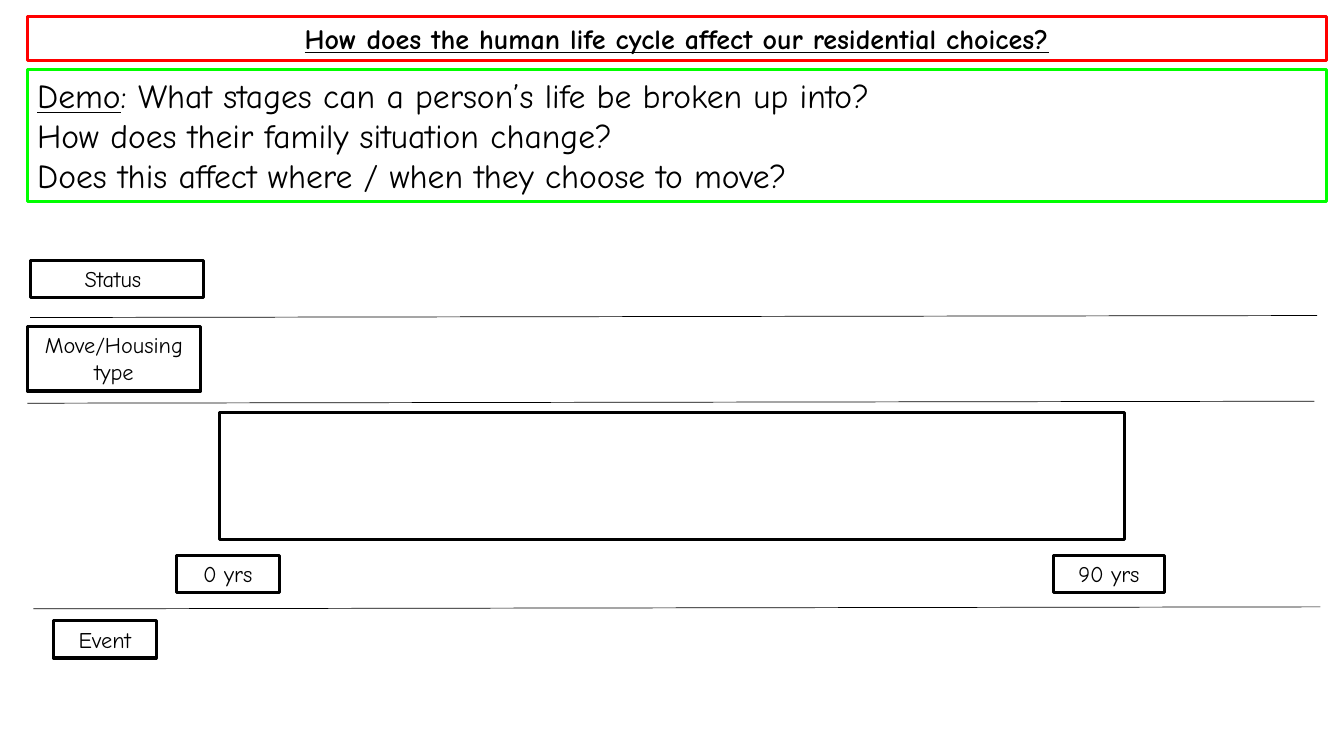
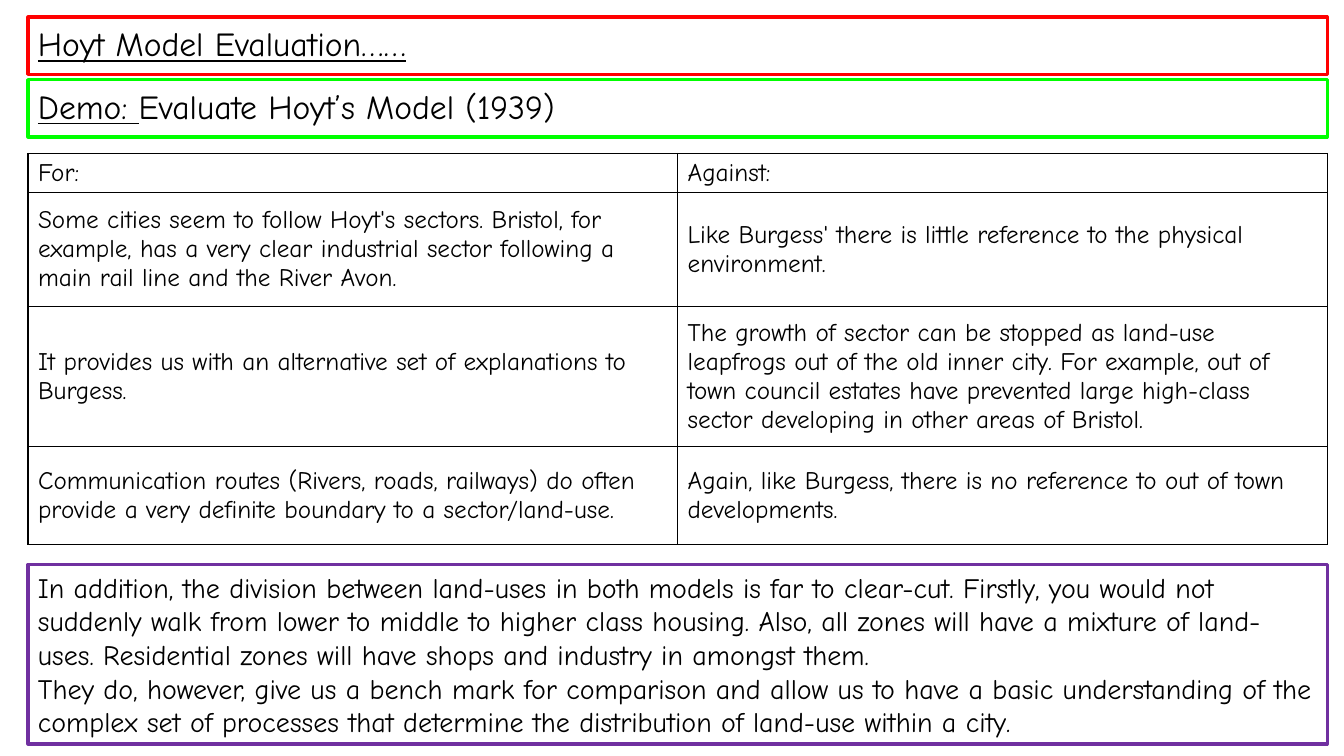
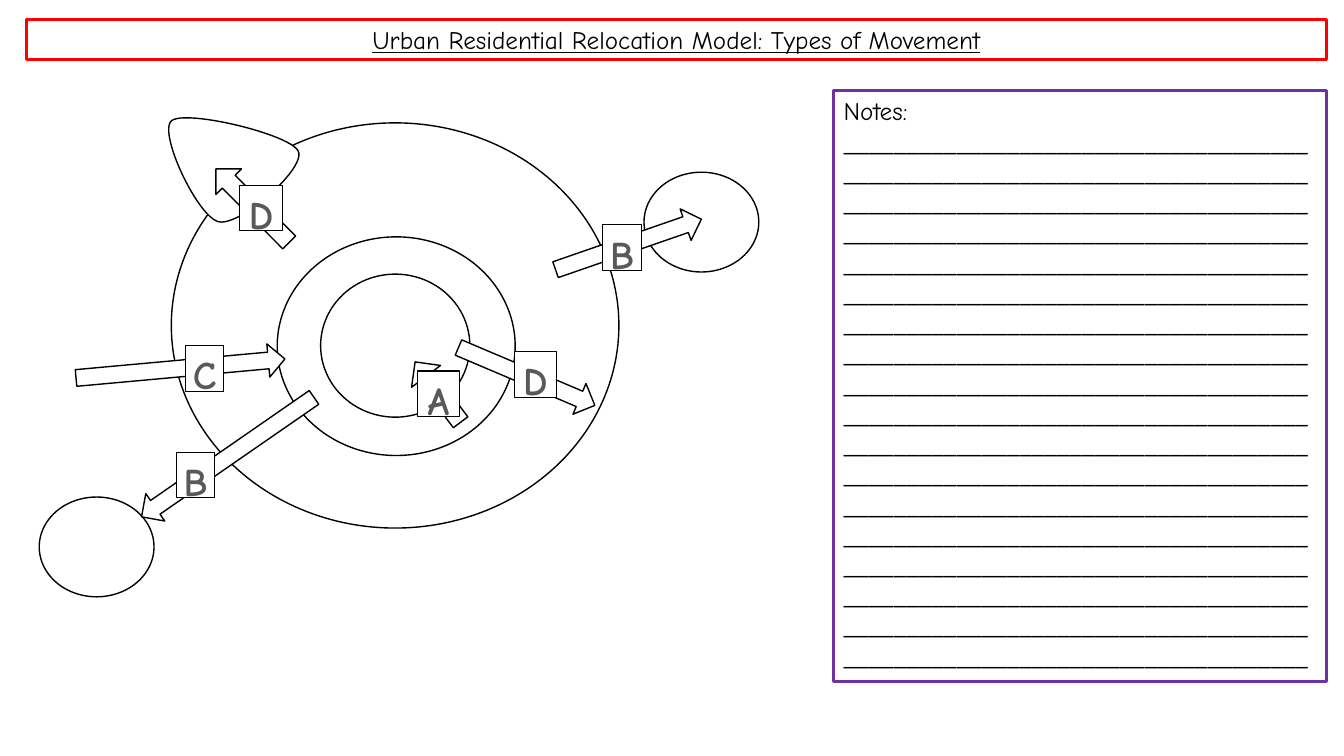
from dataclasses import dataclass
from lxml.etree import SubElement
from pptx import Presentation
from pptx.dml.color import RGBColor
from pptx.enum.shapes import MSO_CONNECTOR, MSO_SHAPE
from pptx.enum.text import MSO_ANCHOR, MSO_AUTO_SIZE, PP_ALIGN
from pptx.oxml.ns import qn
from pptx.util import Pt


@dataclass(frozen=True)
class Theme:
    """Colours, fonts, type sizes and line widths shared by the slides."""
    black: str = "000000"
    white: str = "FFFFFF"
    title_edge: str = "FF0000"
    demo_edge: str = "00FF00"
    note_edge: str = "7030A0"
    letter: str = "595959"
    font: str = "Comic Neue"
    rule_font: str = "Calibri"
    label: float = 16
    body: float = 18
    heading: float = 20
    question: float = 24
    marker: float = 28
    thick: float = 2.25
    outline: float = 1
    thin: float = 0.75
    hairline: float = 0.5


@dataclass(frozen=True)
class Box:
    """A rectangle in points."""
    left: float
    top: float
    width: float
    height: float

    def inside(self, left, top, width, height):
        """Return a box placed relative to this one."""
        return Box(self.left + left, self.top + top, width, height)

    def lengths(self):
        """Return the four sides as slide lengths."""
        return Pt(self.left), Pt(self.top), Pt(self.width), Pt(self.height)


@dataclass(frozen=True)
class Words:
    """A run of text with its style."""
    text: str
    size: float
    underline: bool = False
    bold: bool = False
    font: str = Theme.font
    color: str = Theme.black


THEME = Theme()


def color_of(value):
    """Turn a hex string into a colour."""
    return RGBColor.from_string(value)


def style_shape(shape, edge, width, fill=None):
    """Set the outline and fill and drop the shadow."""
    shape.shadow.inherit = False
    shape.line.color.rgb = color_of(edge)
    shape.line.width = Pt(width)
    if fill:
        shape.fill.solid()
        shape.fill.fore_color.rgb = color_of(fill)
    else:
        shape.fill.background()


def write_text(frame, paragraphs, align=PP_ALIGN.LEFT, spacing=None):
    """Write paragraphs, each a list of runs."""
    for index, runs in enumerate(paragraphs):
        paragraph = frame.add_paragraph() if index else frame.paragraphs[0]
        paragraph.alignment = align
        if spacing:
            paragraph.line_spacing = spacing
        for words in runs:
            run = paragraph.add_run()
            run.text = words.text
            run.font.name = words.font
            run.font.size = Pt(words.size)
            run.font.bold = words.bold
            run.font.underline = words.underline
            run.font.color.rgb = color_of(words.color)


def add_text_box(slide, box, edge, paragraphs, align=PP_ALIGN.LEFT, anchor=MSO_ANCHOR.TOP,
                 spacing=None, width=THEME.thick, fill=None, wrap=True):
    """Add an outlined text box."""
    shape = slide.shapes.add_textbox(*box.lengths())
    style_shape(shape, edge, width, fill)
    frame = shape.text_frame
    frame.auto_size = MSO_AUTO_SIZE.NONE
    frame.word_wrap = wrap
    frame.vertical_anchor = anchor
    write_text(frame, paragraphs, align, spacing)


def add_preset(slide, kind, box, width=THEME.outline, fill=THEME.white, rotation=0):
    """Add a black-outlined preset shape."""
    shape = slide.shapes.add_shape(kind, *box.lengths())
    style_shape(shape, THEME.black, width, fill)
    shape.rotation = rotation


def add_title(slide, box, words):
    """Add the centred title in its red frame."""
    add_text_box(slide, box, THEME.title_edge, [[words]], PP_ALIGN.CENTER)


def add_timeline(slide, area):
    """Add the life cycle timeline with its row labels and dividers."""
    add_preset(slide, MSO_SHAPE.RECTANGLE, area.inside(137.5, 108.5, 646.5, 90.7), THEME.thick, None)
    labels = [
        ("0 yrs", 106.5, 210.7, 73.4, 26.6),
        ("90 yrs", 733, 210.7, 79.2, 26.6),
        ("Event", 18.7, 257.5, 73.4, 26.6),
        ("Move/Housing type", 0, 47.3, 123.8, 46),
        ("Status ", 2, 0, 123.8, 26.6),
    ]
    for text, *place in labels:
        add_text_box(slide, area.inside(*place), THEME.black, [[Words(text, THEME.label)]], PP_ALIGN.CENTER)
    for left, top in [(2, 40.8), (0, 102), (4.3, 248.9)]:
        divider = area.inside(left, top, 919.4, 1.4)
        connector = slide.shapes.add_connector(
            MSO_CONNECTOR.STRAIGHT, Pt(divider.left), Pt(divider.top),
            Pt(divider.left + divider.width), Pt(divider.top - divider.height))
        connector.line.color.rgb = color_of(THEME.black)
        connector.line.width = Pt(THEME.hairline)
        SubElement(connector._element.spPr, qn("a:effectLst"))


def add_cell_borders(cell):
    """Draw a black line on each side of a cell."""
    properties = cell._tc.get_or_add_tcPr()
    for index, side in enumerate(("a:lnL", "a:lnR", "a:lnT", "a:lnB")):
        line = properties.makeelement(qn(side), {"w": str(Pt(THEME.outline))})
        properties.insert(index, line)
        SubElement(SubElement(line, qn("a:solidFill")), qn("a:srgbClr"), val=THEME.black)


def add_arguments(slide, area, heights, rows):
    """Add the table of arguments for and against."""
    table = slide.shapes.add_table(len(rows), len(rows[0]), *area.lengths()).table
    table.first_row = table.horz_banding = False
    for column in table.columns:
        column.width = Pt(area.width / len(rows[0]))
    for row, height, texts in zip(table.rows, heights, rows):
        row.height = Pt(height)
        for cell, text in zip(row.cells, texts):
            cell.fill.background()
            cell.vertical_anchor = MSO_ANCHOR.MIDDLE
            write_text(cell.text_frame, [[Words(text, THEME.body)]])
            add_cell_borders(cell)


def curve_points(start, curves, steps=24):
    """Sample a chain of cubic curves."""
    points = []
    for first, second, end in curves:
        for step in range(1, steps + 1):
            t = step / steps
            weights = ((1 - t) ** 3, 3 * t * (1 - t) ** 2, 3 * t * t * (1 - t), t ** 3)
            corners = (start, first, second, end)
            points.append(tuple(sum(w * c[axis] for w, c in zip(weights, corners)) for axis in (0, 1)))
        start = end
    return points


def add_suburb(slide, area):
    """Add the rounded triangular suburb."""
    start = (128.2, 74.4)
    curves = [
        ((113.1, 70.8), (85, 11), (94.4, 2.4)),
        ((103.8, -6.2), (179.4, 11.8), (185.1, 24)),
        ((190.9, 36.2), (143.4, 78), start),
    ]
    points = [(Pt(area.left + x), Pt(area.top + y)) for x, y in [start, *curve_points(start, curves)]]
    builder = slide.shapes.build_freeform(*points[0])
    builder.add_line_segments(points[1:], close=True)
    style_shape(builder.convert_to_shape(), THEME.black, THEME.outline, THEME.white)


def add_movement_model(slide, area):
    """Add the city rings, outlying towns and lettered movement arrows."""
    town = (82, 71.3)
    ellipses = [
        (432, 39, *town),
        (94.4, 3.8, 319.7, 289.4),
        (170, 85.2, 170, 156.2),
        (201, 111.8, 106.6, 102.2),
        (0, 271, *town),
    ]
    for place in ellipses:
        add_preset(slide, MSO_SHAPE.OVAL, area.inside(*place))
    add_suburb(slide, area)
    arrows = [
        (26, 167.3, 149.8, 23.8, 354.8),
        (59.8, 230.6, 149.8, 23.8, 145.3),
        (257.8, 183.1, 54, 25.9, 233),
        (295.3, 173, 105.8, 23.8, 23),
        (115.3, 49.9, 74.2, 25.9, 225.1),
        (365.8, 78.7, 110.2, 23.8, 340.9),
    ]
    for *place, rotation in arrows:
        add_preset(slide, MSO_SHAPE.RIGHT_ARROW, area.inside(*place), rotation=rotation)
    markers = [
        ("A", 270.1, 181, 30.2),
        ("B", 98, 239.3, 27.4),
        ("B", 402.6, 76.6, 27.4),
        ("C", 104.5, 163, 27.4),
        ("D", 339.2, 167.3, 30.2),
        ("D", 143.4, 48.5, 30.2),
    ]
    for letter, left, top, width in markers:
        words = Words(letter, THEME.marker, bold=True, color=THEME.letter)
        add_text_box(slide, area.inside(left, top, width, 32.4), THEME.black, [[words]],
                     PP_ALIGN.CENTER, width=THEME.thin, fill=THEME.white, wrap=False)


def add_notes_panel(slide, area, lines=18, marks_per_line=37):
    """Add the ruled writing panel."""
    ruling = Words("_" * (lines * marks_per_line), THEME.body, font=THEME.rule_font)
    add_text_box(slide, area, THEME.note_edge, [[Words("Notes:", THEME.body)], [ruling]])


def build_life_cycle(slide):
    """Build the life cycle slide."""
    add_title(slide, Box(19.5, 11.5, 928, 31.7), Words(
        "How does the human life cycle affect our residential choices?", THEME.heading, True, True))
    size = THEME.question
    add_text_box(slide, Box(19.5, 49.7, 928, 94.3), THEME.demo_edge, [
        [Words("Demo", size, True), Words(": What stages can a person’s life be broken up into?", size)],
        [Words("How does their family situation change?", size)],
        [Words("Does this affect where / when they choose to move?", size)],
    ])
    add_timeline(slide, Box(19.5, 186, 924, 284))


def build_evaluation(slide):
    """Build the model evaluation slide."""
    add_arguments(slide, Box(20, 109.6, 928, 279.4), (28, 81.5, 100, 69.9), [
        ("For:", "Against:"),
        ("Some cities seem to follow Hoyt's sectors. Bristol, for example, has a very clear "
         "industrial sector following a main rail line and the River Avon.",
         "Like Burgess' there is little reference to the physical environment."),
        ("It provides us with an alternative set of explanations to Burgess.",
         "The growth of sector can be stopped as land-use leapfrogs out of the old inner city. "
         "For example, out of town council estates have prevented large high-class sector "
         "developing in other areas of Bristol."),
        ("Communication routes (Rivers, roads, railways) do often provide a very definite "
         "boundary to a sector/land-use.",
         "Again, like Burgess, there is no reference to out of town developments."),
    ])
    summary = [
        "In addition, the division between land-uses in both models is far to clear-cut. Firstly, "
        "you would not suddenly walk from lower to middle to higher class housing. Also, all zones "
        "will have a mixture of land-uses. Residential zones will have shops and industry in "
        "amongst them.",
        "They do, however, give us a bench mark for comparison and allow us to have a basic "
        "understanding of the complex set of processes that determine the distribution of land-use "
        "within a city.",
    ]
    add_text_box(slide, Box(20, 403.2, 928, 128.2), THEME.note_edge,
                 [[Words(text, THEME.heading)] for text in summary], anchor=MSO_ANCHOR.MIDDLE)
    size = THEME.question
    bands = [
        (12.2, THEME.title_edge, [Words("Hoyt Model Evaluation……", size, True)]),
        (56.9, THEME.demo_edge, [Words("Demo: ", size, True), Words("Evaluate Hoyt’s Model (1939)", size)]),
    ]
    for top, edge, runs in bands:
        add_text_box(slide, Box(20, top, 928, 41), edge, [runs], anchor=MSO_ANCHOR.MIDDLE, spacing=0.9)


def build_movement(slide):
    """Build the types of movement slide."""
    add_movement_model(slide, Box(28, 84, 514, 343))
    add_title(slide, Box(18.7, 13.7, 928.8, 28.8), Words(
        "Urban Residential Relocation Model: Types of Movement", THEME.body, True))
    add_notes_panel(slide, Box(595.5, 64.8, 352, 422))


def main():
    """Build and save the presentation."""
    presentation = Presentation()
    presentation.slide_width, presentation.slide_height = Pt(960), Pt(540)
    for build in (build_life_cycle, build_evaluation, build_movement):
        build(presentation.slides.add_slide(presentation.slide_layouts[6]))
    presentation.save("out.pptx")


if __name__ == "__main__":
    main()
